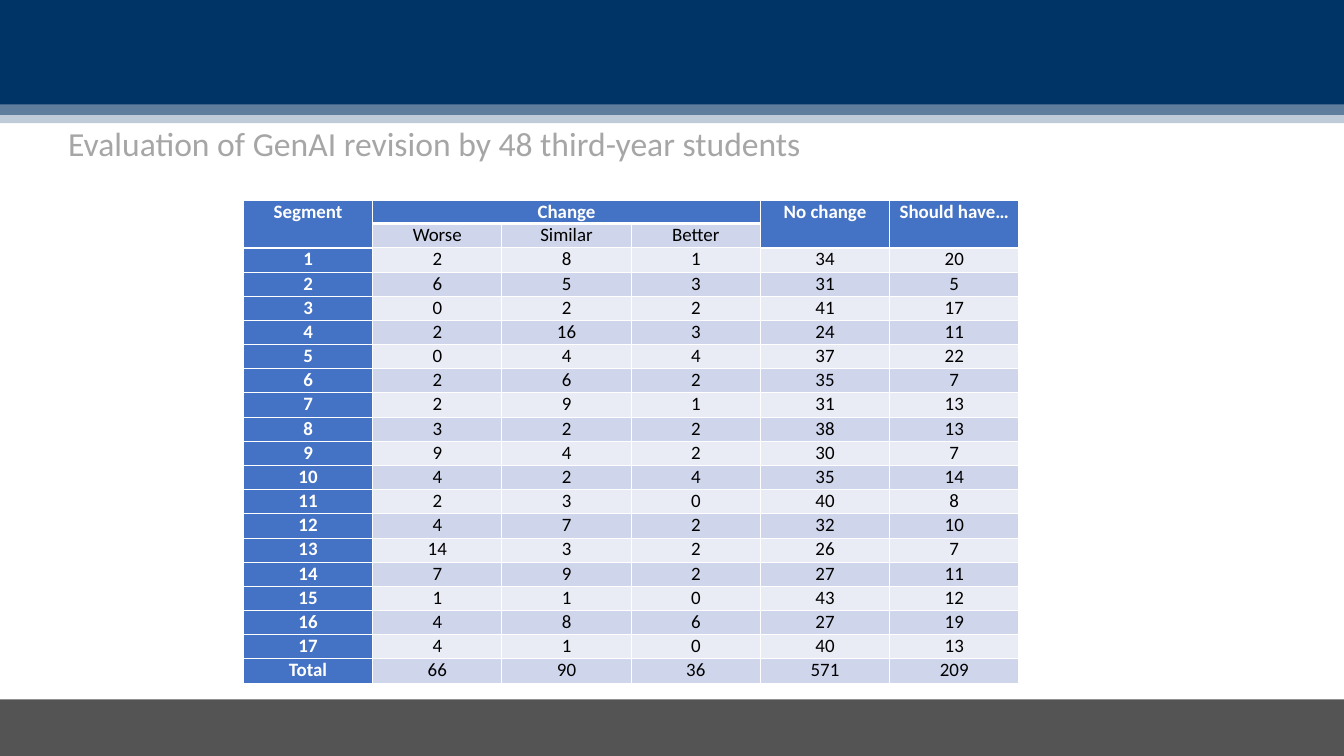
from dataclasses import dataclass

import lxml.etree
import pptx
import pptx.dml.color
import pptx.enum.shapes
import pptx.enum.text
import pptx.oxml.ns
import pptx.util
from pptx.util import Inches

RGBColor = pptx.dml.color.RGBColor
WHITE = RGBColor(0xFF, 0xFF, 0xFF)
BLACK = RGBColor(0x00, 0x00, 0x00)
NAVY = RGBColor(0x00, 0x33, 0x66)
HEADER_BLUE = RGBColor(0x44, 0x72, 0xC4)
BAND_DARK = RGBColor(0xCF, 0xD5, 0xEA)
BAND_LIGHT = RGBColor(0xE9, 0xEB, 0xF5)
TITLE_GREY = RGBColor(0xA6, 0xA6, 0xA6)

FONT = "Calibri"
ALIGN = pptx.enum.text.PP_ALIGN
TABLE_LEFT, TABLE_TOP = 3.22, 2.65
COLUMN_WIDTH = 1.71
FIRST_ROW_HEIGHT, ROW_HEIGHT = 0.31, 0.32
MERGED_COLUMNS = (0, 4, 5)

HEADINGS = ["Segment", "Change", "", "", "No change", "Should have…"]
SUBHEADINGS = ["", "Worse", "Similar", "Better", "", ""]
RESULTS = [
    (2, 8, 1, 34, 20),
    (6, 5, 3, 31, 5),
    (0, 2, 2, 41, 17),
    (2, 16, 3, 24, 11),
    (0, 4, 4, 37, 22),
    (2, 6, 2, 35, 7),
    (2, 9, 1, 31, 13),
    (3, 2, 2, 38, 13),
    (9, 4, 2, 30, 7),
    (4, 2, 4, 35, 14),
    (2, 3, 0, 40, 8),
    (4, 7, 2, 32, 10),
    (14, 3, 2, 26, 7),
    (7, 9, 2, 27, 11),
    (1, 1, 0, 43, 12),
    (4, 8, 6, 27, 19),
    (4, 1, 0, 40, 13),
]
TOTALS = (66, 90, 36, 571, 209)


@dataclass(frozen=True)
class Band:
    left: float
    top: float
    width: float
    height: float
    color: RGBColor
    opacity: int = 100


BANDS = [
    Band(-0.01, 0, 17.81, 1.63, NAVY, 25),
    Band(-0.01, 0, 17.81, 1.52, NAVY, 50),
    Band(-0.02, 0, 17.81, 1.38, NAVY),
    Band(0, 9.25, 17.78, 0.79, BLACK, 67),
]


def write_text(frame, text: str, *, size: float, color: RGBColor, bold: bool = False,
               align=ALIGN.LEFT, line_spacing: float = 1.0) -> None:
    paragraph = frame.paragraphs[0]
    paragraph.alignment = align
    paragraph.line_spacing = line_spacing
    run = paragraph.add_run()
    run.text = text
    run.font.name = FONT
    run.font.size = pptx.util.Pt(size)
    run.font.bold = bold
    run.font.color.rgb = color


def draw_band(slide, band: Band) -> None:
    shape = slide.shapes.add_shape(
        pptx.enum.shapes.MSO_SHAPE.RECTANGLE,
        Inches(band.left), Inches(band.top), Inches(band.width), Inches(band.height))
    shape.shadow.inherit = False
    shape.line.fill.background()
    shape.fill.solid()
    shape.fill.fore_color.rgb = band.color
    if band.opacity < 100:
        color = shape.fill._xPr.find(".//" + pptx.oxml.ns.qn("a:srgbClr"))
        alpha = lxml.etree.SubElement(color, pptx.oxml.ns.qn("a:alpha"))
        alpha.set("val", str(band.opacity * 1000))


def set_borders(cell, bottom_width: float) -> None:
    properties = cell._tc.get_or_add_tcPr()
    for side, width in (("L", 1), ("R", 1), ("T", 1), ("B", bottom_width)):
        line = lxml.etree.SubElement(properties, pptx.oxml.ns.qn(f"a:ln{side}"))
        line.set("w", str(pptx.util.Pt(width)))
        fill = lxml.etree.SubElement(line, pptx.oxml.ns.qn("a:solidFill"))
        lxml.etree.SubElement(fill, pptx.oxml.ns.qn("a:srgbClr")).set("val", str(WHITE))


def fill_cell(cell, text: str, row: int, column: int) -> None:
    is_header = row == 0 or column == 0 or (row == 1 and column in MERGED_COLUMNS)
    ends_header = row == 0 or (row == 1 and column in MERGED_COLUMNS)
    set_borders(cell, 3 if ends_header else 1)
    cell.fill.solid()
    band_color = BAND_DARK if row % 2 else BAND_LIGHT
    cell.fill.fore_color.rgb = HEADER_BLUE if is_header else band_color
    cell.margin_left = cell.margin_right = Inches(0.05)
    cell.margin_top = cell.margin_bottom = 0
    if text:
        write_text(cell.text_frame, text, size=18, bold=is_header,
                   color=WHITE if is_header else BLACK, align=ALIGN.CENTER)


def draw_results_table(slide) -> None:
    segments = [[str(value) for value in (number, *counts)]
                for number, counts in enumerate(RESULTS, start=1)]
    rows = [HEADINGS, SUBHEADINGS, *segments, ["Total", *map(str, TOTALS)]]
    height = FIRST_ROW_HEIGHT + ROW_HEIGHT * (len(rows) - 1)
    table = slide.shapes.add_table(
        len(rows), len(HEADINGS), Inches(TABLE_LEFT), Inches(TABLE_TOP),
        Inches(COLUMN_WIDTH * len(HEADINGS)), Inches(height)).table
    for column in table.columns:
        column.width = Inches(COLUMN_WIDTH)
    for index, values in enumerate(rows):
        table.rows[index].height = Inches(ROW_HEIGHT if index else FIRST_ROW_HEIGHT)
        for column, text in enumerate(values):
            fill_cell(table.cell(index, column), text, index, column)
    for column in MERGED_COLUMNS:
        table.cell(0, column).merge(table.cell(1, column))
    table.cell(0, 1).merge(table.cell(0, 3))


def draw_title(slide, text: str) -> None:
    title = slide.shapes.title
    title.left, title.top = Inches(0.86), Inches(1.69)
    title.width, title.height = Inches(16.06), Inches(0.71)
    frame = title.text_frame
    frame.word_wrap = True
    frame.auto_size = pptx.enum.text.MSO_AUTO_SIZE.NONE
    frame.vertical_anchor = pptx.enum.text.MSO_ANCHOR.TOP
    frame.margin_left, frame.margin_top = Inches(0.04), 0
    frame.margin_right, frame.margin_bottom = Inches(0.18), Inches(0.09)
    write_text(frame, text, size=32, color=TITLE_GREY, line_spacing=0.9)


def main() -> None:
    presentation = pptx.Presentation()
    presentation.slide_width = Inches(17.78)
    presentation.slide_height = Inches(10)
    slide = presentation.slides.add_slide(presentation.slide_layouts[5])
    for band in BANDS:
        draw_band(slide, band)
    draw_results_table(slide)
    draw_title(slide, "Evaluation of GenAI revision by 48 third-year students")
    presentation.save("out.pptx")


if __name__ == "__main__":
    main()
